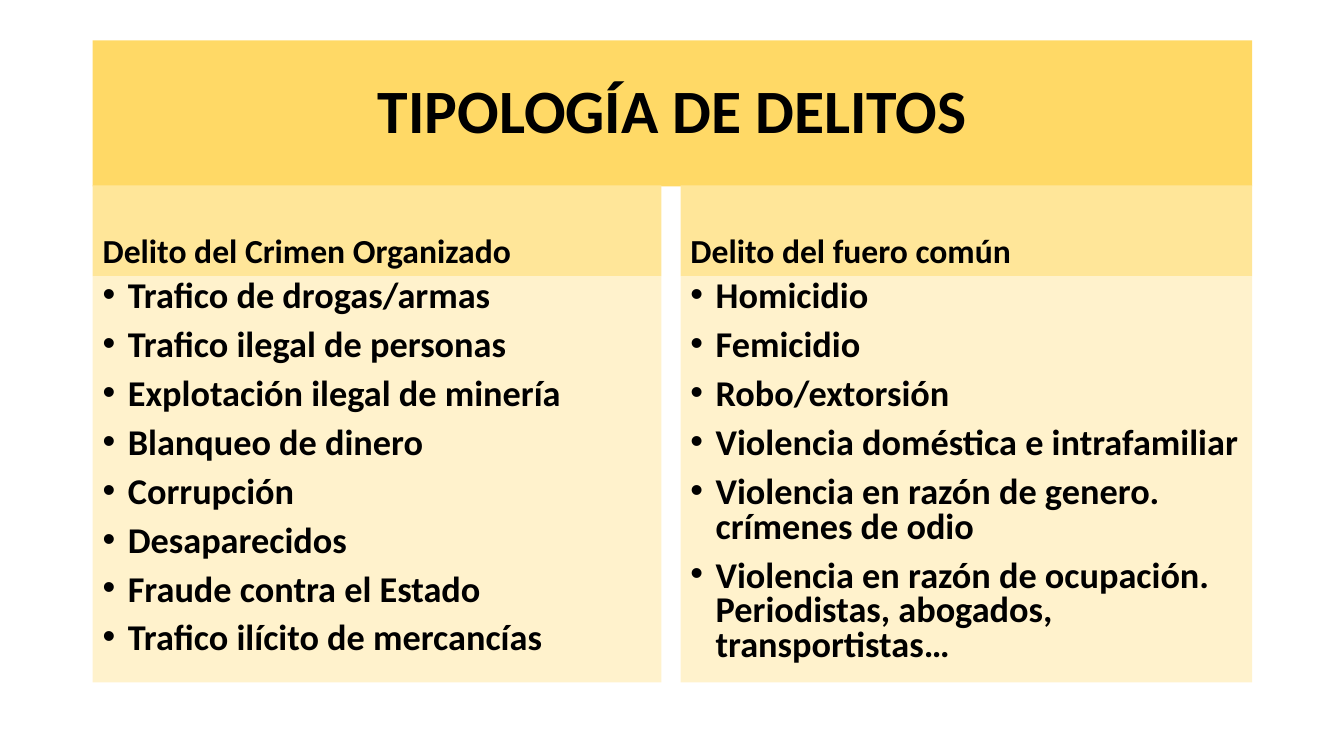
from lxml import etree
from pptx import Presentation
from pptx.dml.color import RGBColor
from pptx.enum import shapes, text
from pptx.oxml import ns
from pptx.util import Inches, Pt

TITLE = "TIPOLOGÍA DE DELITOS"
COLUMNS = [
    {
        "left": 0.92, "width": 5.64,
        "heading": "Delito del Crimen Organizado",
        "crimes": [
            "Trafico de drogas/armas",
            "Trafico ilegal de personas",
            "Explotación ilegal de minería",
            "Blanqueo de dinero",
            "Corrupción",
            "Desaparecidos",
            "Fraude contra el Estado",
            "Trafico ilícito de mercancías",
        ],
    },
    {
        "left": 6.75, "width": 5.67,
        "heading": "Delito del fuero común",
        "crimes": [
            "Homicidio",
            "Femicidio",
            "Robo/extorsión",
            "Violencia doméstica e intrafamiliar",
            "Violencia en razón de genero. crímenes de odio",
            "Violencia en razón de ocupación. Periodistas, abogados, transportistas…",
        ],
    },
]
THEME = {
    "font": "Calibri", "ink": "000000",
    "title_fill": "FFD966", "heading_fill": "FFE699", "list_fill": "FFF2CC",
    "title_size": 44, "heading_size": 24, "list_size": 25.9,
}
TITLE_TOP, TITLE_HEIGHT = 0.4, 1.45
HEADING_TOP, HEADING_HEIGHT = 1.84, 0.9
LIST_HEIGHT = 4.03
BULLET_INDENT = 0.25


def add_bullet(para):
    props = para._p.get_or_add_pPr()
    props.set("marL", str(Inches(BULLET_INDENT)))
    props.set("indent", str(-Inches(BULLET_INDENT)))
    etree.SubElement(props, ns.qn("a:buFont")).set("typeface", "Arial")
    etree.SubElement(props, ns.qn("a:buChar")).set("char", "•")


def add_panel(page, lines, place, *, fill, size, anchor,
              align=text.PP_ALIGN.LEFT, line_spacing=0.9, before=0, bullets=False):
    """Draw a filled rectangle with one paragraph per line of text."""
    box = page.shapes.add_shape(shapes.MSO_SHAPE.RECTANGLE,
                                *[Inches(length) for length in place])
    box.shadow.inherit = False
    box.fill.solid()
    box.fill.fore_color.rgb = RGBColor.from_string(fill)
    box.line.fill.background()
    frame = box.text_frame
    frame.word_wrap = True
    frame.vertical_anchor = anchor
    for index, line in enumerate(lines):
        para = frame.add_paragraph() if index else frame.paragraphs[0]
        para.alignment = align
        para.line_spacing = line_spacing
        para.space_before = Pt(before)
        if bullets:
            add_bullet(para)
        span = para.add_run()
        span.text = line
        span.font.name = THEME["font"]
        span.font.size = Pt(size)
        span.font.bold = True
        span.font.color.rgb = RGBColor.from_string(THEME["ink"])


def main():
    deck = Presentation()
    deck.slide_width, deck.slide_height = Inches(13.33), Inches(7.5)
    page = deck.slides.add_slide(deck.slide_layouts[6])

    # Title band spans both columns
    left = COLUMNS[0]["left"]
    right = COLUMNS[-1]["left"] + COLUMNS[-1]["width"]
    add_panel(page, [TITLE], (left, TITLE_TOP, right - left, TITLE_HEIGHT),
              fill=THEME["title_fill"], size=THEME["title_size"],
              anchor=text.MSO_ANCHOR.MIDDLE, align=text.PP_ALIGN.CENTER)

    # Each column: heading above its bulleted list
    for column in COLUMNS:
        left, width = column["left"], column["width"]
        add_panel(page, [column["heading"]],
                  (left, HEADING_TOP, width, HEADING_HEIGHT),
                  fill=THEME["heading_fill"], size=THEME["heading_size"],
                  anchor=text.MSO_ANCHOR.BOTTOM, before=10)
        add_panel(page, column["crimes"],
                  (left, HEADING_TOP + HEADING_HEIGHT, width, LIST_HEIGHT),
                  fill=THEME["list_fill"], size=THEME["list_size"],
                  anchor=text.MSO_ANCHOR.TOP, line_spacing=0.8, before=10,
                  bullets=True)

    deck.save("out.pptx")


if __name__ == "__main__":
    main()
